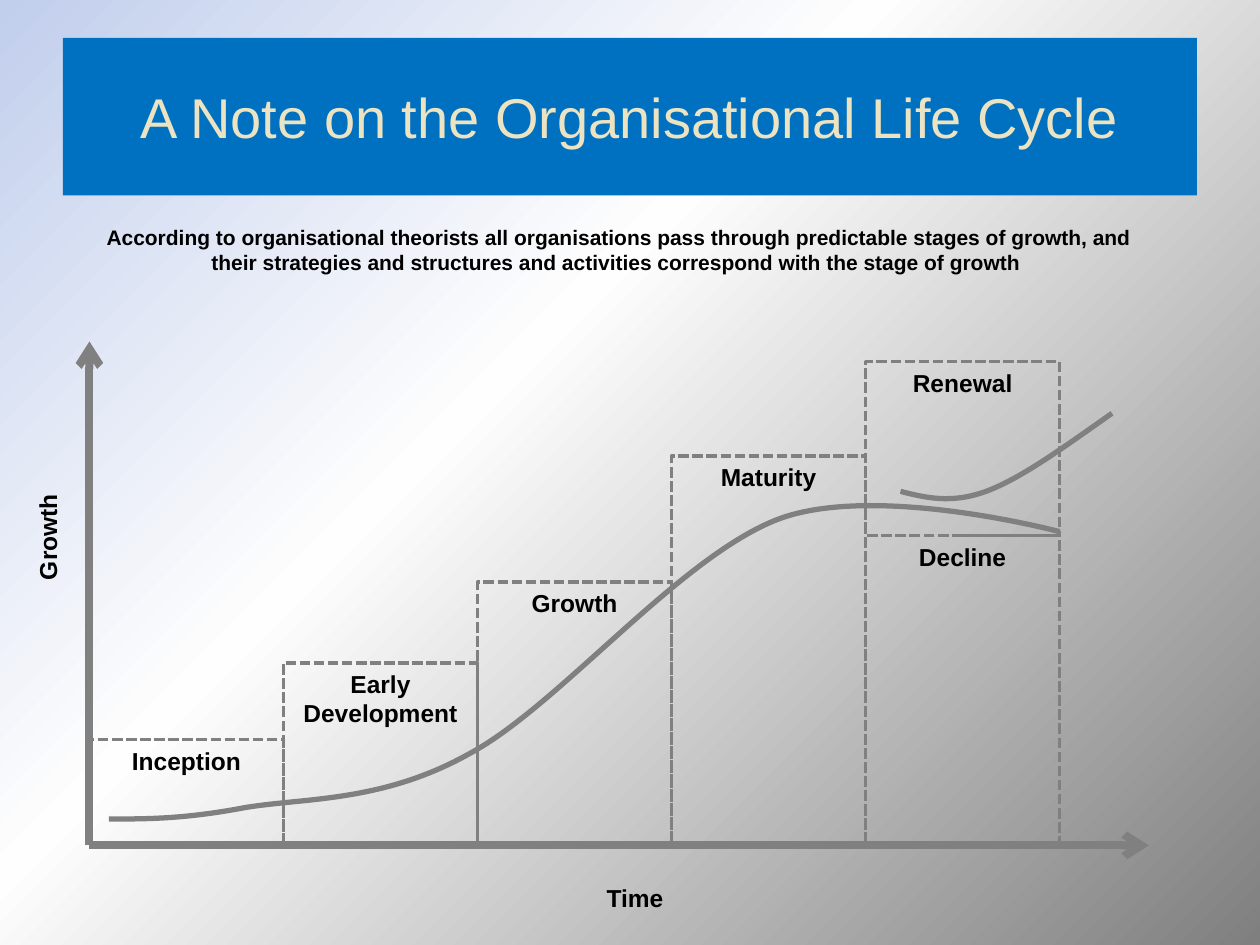
import copy
from typing import NamedTuple

import lxml.etree
import pptx
import pptx.dml.color
import pptx.enum.dml
import pptx.enum.shapes
import pptx.enum.text
import pptx.oxml
import pptx.oxml.ns
import pptx.util

RGBColor = pptx.dml.color.RGBColor
BLUE = RGBColor(0x00, 0x70, 0xC0)
CREAM = RGBColor(0xEB, 0xE3, 0xC2)
GREY = RGBColor(0x80, 0x80, 0x80)
BLACK = RGBColor(0x00, 0x00, 0x00)
BACKDROP = (
    (0, RGBColor(0xC1, 0xCE, 0xEC)),
    (0.4, RGBColor(0xFE, 0xFE, 0xFE)),
    (1, RGBColor(0x7F, 0x7F, 0x7F)),
)

FONT = "Arial"
WIDTH, HEIGHT = 10, 7.5
ORIGIN_X, ORIGIN_Y = 0.71, 6.71
COLUMN, ROW = 1.54, 0.1


class GridPoint(NamedTuple):
    column: float
    row: float


class Area(NamedTuple):
    left: float
    top: float
    width: float
    height: float


class Stage(NamedTuple):
    name: str
    column: int
    top: float
    bottom: float = 0


class Label(NamedTuple):
    text: str
    area: Area
    size: int = 14
    direction: str = "horz"


STAGES = (
    Stage("Inception", 0, 8.4),
    Stage("Early Development", 1, 14.5),
    Stage("Growth", 2, 20.9),
    Stage("Maturity", 3, 30.9),
    Stage("Decline", 4, 24.6),
    Stage("Renewal", 4, 38.4, 24.6),
)
LABELS = (
    Label("Growth", Area(2.1, 50.7, 4.4, 12.27), direction="vert270"),
    Label("Time", Area(34.55, 92.8, 31.7, 4.53)),
    Label(
        "According to organisational theorists all organisations pass through "
        "predictable stages of growth, and their strategies and structures and "
        "activities correspond with the stage of growth ",
        Area(7.05, 23.07, 84.2, 6.67),
        size=12,
    ),
)
LIFE_CYCLE = (
    GridPoint(0.1, 2.1), GridPoint(0.3, 2.1), GridPoint(0.49, 2.1),
    GridPoint(0.8, 3), GridPoint(1.11, 3.8), GridPoint(1.51, 3.4),
    GridPoint(1.96, 7.3), GridPoint(2.42, 11.1), GridPoint(3.04, 22.9),
    GridPoint(3.55, 25.9), GridPoint(4.05, 28.8), GridPoint(5, 24.9),
    GridPoint(5, 24.9),
)
RENEWAL = (
    GridPoint(4.18, 28.1), GridPoint(4.31, 27.6), GridPoint(4.44, 27.1),
    GridPoint(4.62, 28.1), GridPoint(4.8, 29.1), GridPoint(5.03, 31.7),
    GridPoint(5.27, 34.3),
)
AXIS_ENDS = (GridPoint(5.46, 0), GridPoint(0, 40))


def place(point: GridPoint) -> tuple:
    return (
        pptx.util.Inches(ORIGIN_X + point.column * COLUMN),
        pptx.util.Inches(ORIGIN_Y - point.row * ROW),
    )


def share(area: Area) -> tuple:
    return (
        pptx.util.Inches(WIDTH * area.left / 100),
        pptx.util.Inches(HEIGHT * area.top / 100),
        pptx.util.Inches(WIDTH * area.width / 100),
        pptx.util.Inches(HEIGHT * area.height / 100),
    )


def write(frame, text: str, size: int, color: RGBColor, bold: bool = True) -> None:
    frame.word_wrap = True
    paragraph = frame.paragraphs[0]
    paragraph.alignment = pptx.enum.text.PP_ALIGN.CENTER
    run = paragraph.add_run()
    run.text = text
    run.font.name = FONT
    run.font.size = pptx.util.Pt(size)
    run.font.bold = bold
    run.font.color.rgb = color


def stroke(line, width: float) -> None:
    line.color.rgb = GREY
    line.width = pptx.util.Pt(width)


def paint_backdrop(slide) -> None:
    fill = slide.background.fill
    fill.gradient()
    fill.gradient_angle = 315
    stops = slide.element.find(".//" + pptx.oxml.ns.qn("a:gsLst"))
    stops.append(copy.deepcopy(stops[-1]))
    for stop, (position, color) in zip(fill.gradient_stops, BACKDROP):
        stop.position = position
        stop.color.rgb = color


def add_title(shapes) -> None:
    banner = shapes.add_shape(
        pptx.enum.shapes.MSO_SHAPE.RECTANGLE, *share(Area(5, 4, 90, 16.67))
    )
    banner.shadow.inherit = False
    banner.fill.solid()
    banner.fill.fore_color.rgb = BLUE
    banner.line.fill.background()
    banner.text_frame.vertical_anchor = pptx.enum.text.MSO_ANCHOR.MIDDLE
    write(banner.text_frame, "A Note on the Organisational Life Cycle", 32, CREAM, False)


def add_curve(shapes, points: tuple) -> None:
    builder = shapes.build_freeform(*place(points[0]))
    builder.add_line_segments([place(point) for point in points[3::3]], close=False)
    curve = builder.convert_to_shape()
    qn = pptx.oxml.ns.qn
    outline = curve.element.find(".//" + qn("a:path"))
    for segment in outline.findall(qn("a:lnTo")):
        outline.remove(segment)
    for first in range(1, len(points), 3):
        bend = lxml.etree.SubElement(outline, qn("a:cubicBezTo"))
        for point in points[first:first + 3]:
            x, y = place(point)
            lxml.etree.SubElement(
                bend, qn("a:pt"), x=str(x - curve.left), y=str(y - curve.top)
            )
    curve.shadow.inherit = False
    curve.fill.background()
    stroke(curve.line, 3)


def add_axis(shapes, end: GridPoint) -> None:
    axis = shapes.add_connector(
        pptx.enum.shapes.MSO_CONNECTOR.STRAIGHT, *place(GridPoint(0, 0)), *place(end)
    )
    stroke(axis.line, 4.5)
    properties = axis.element.spPr
    arrow = pptx.oxml.parse_xml(
        f'<a:tailEnd {pptx.oxml.ns.nsdecls("a")} type="arrow"/>'
    )
    properties.find(pptx.oxml.ns.qn("a:ln")).append(arrow)
    properties.append(
        pptx.oxml.parse_xml(f'<a:effectLst {pptx.oxml.ns.nsdecls("a")}/>')
    )


def add_label(shapes, label: Label) -> None:
    frame = shapes.add_textbox(*share(label.area)).text_frame
    write(frame, label.text, label.size, BLACK)
    frame.auto_size = pptx.enum.text.MSO_AUTO_SIZE.SHAPE_TO_FIT_TEXT
    frame._txBody.bodyPr.set("vert", label.direction)


def add_stage(shapes, stage: Stage) -> None:
    left, top = place(GridPoint(stage.column, stage.top))
    right, bottom = place(GridPoint(stage.column + 1, stage.bottom))
    box = shapes.add_shape(
        pptx.enum.shapes.MSO_SHAPE.RECTANGLE, left, top, right - left, bottom - top
    )
    box.shadow.inherit = False
    box.fill.background()
    stroke(box.line, 2)
    box.line.dash_style = pptx.enum.dml.MSO_LINE.SQUARE_DOT
    box.text_frame.vertical_anchor = pptx.enum.text.MSO_ANCHOR.TOP
    write(box.text_frame, stage.name, 14, BLACK)


def main() -> None:
    deck = pptx.Presentation()
    deck.slide_width = pptx.util.Inches(WIDTH)
    deck.slide_height = pptx.util.Inches(HEIGHT)
    slide = deck.slides.add_slide(deck.slide_layouts[6])
    paint_backdrop(slide)
    add_title(slide.shapes)
    for points in (LIFE_CYCLE, RENEWAL):
        add_curve(slide.shapes, points)
    for end in AXIS_ENDS:
        add_axis(slide.shapes, end)
    for label in LABELS:
        add_label(slide.shapes, label)
    for stage in STAGES:
        add_stage(slide.shapes, stage)
    deck.save("out.pptx")


if __name__ == "__main__":
    main()
